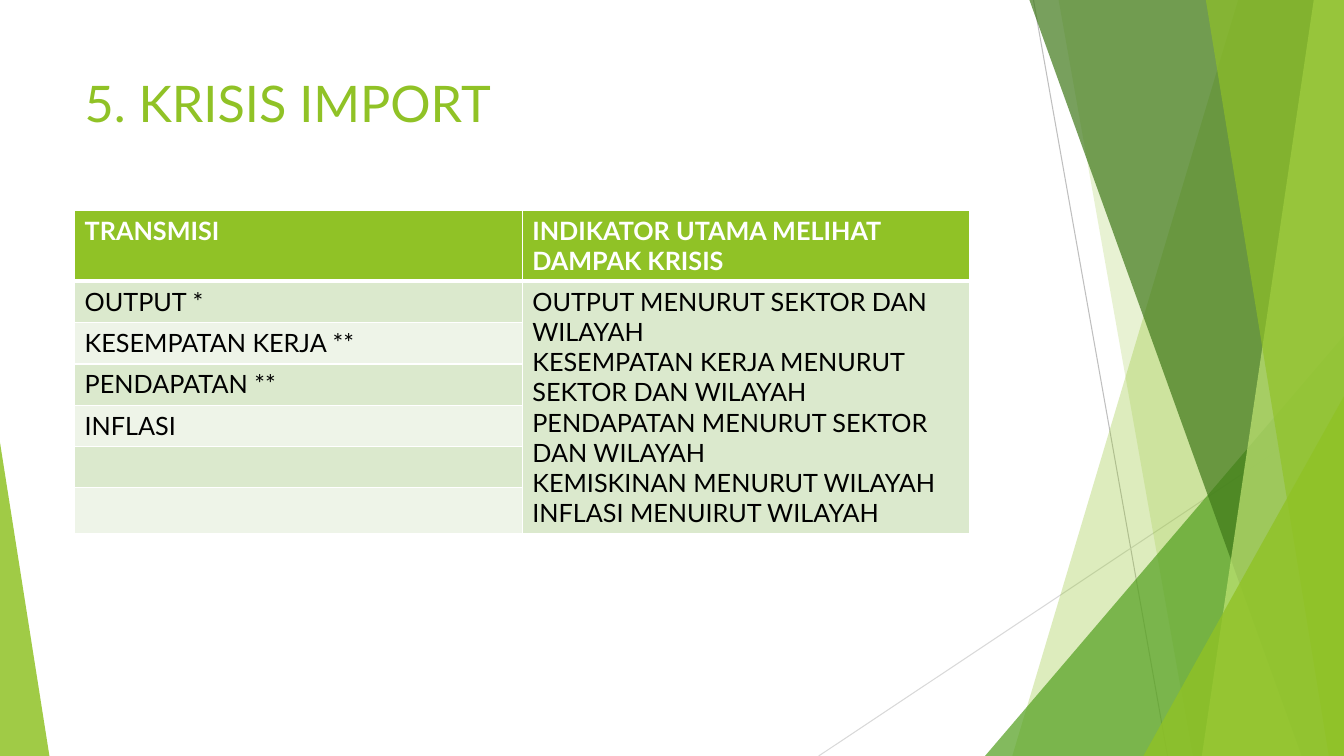
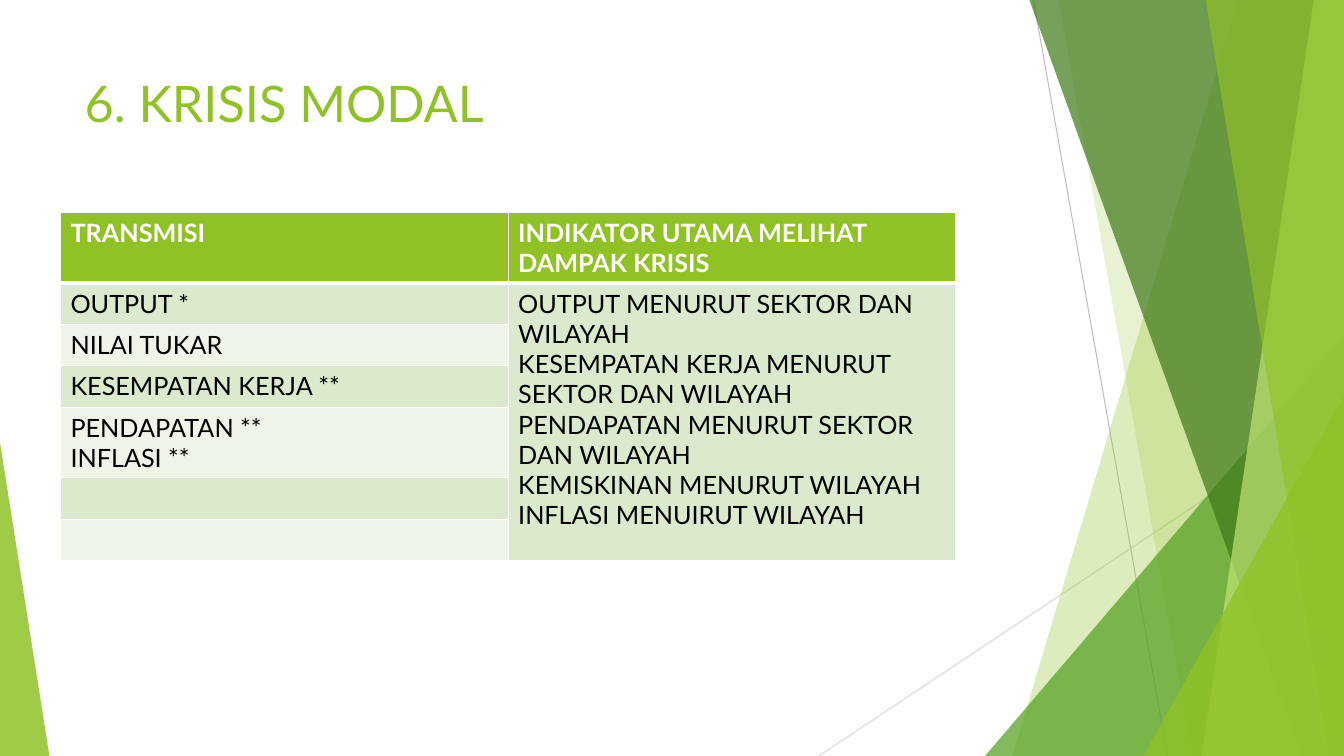
from dataclasses import dataclass

from lxml.etree import SubElement
from pptx import Presentation
from pptx.dml.color import RGBColor
from pptx.enum.shapes import MSO_CONNECTOR as Connector, MSO_SHAPE as Shape
from pptx.enum.text import MSO_ANCHOR as Anchor
from pptx.oxml.ns import qn
from pptx.util import Inches, Pt


@dataclass(frozen=True)
class Theme:
    font: str = "Lato"
    title_size: int = 36
    table_size: int = 18
    lime: str = "90C226"
    green: str = "54A021"
    forest: str = "3F7819"
    pale_lime: str = "C0E474"
    band_dark: str = "DBE9CD"
    band_light: str = "EEF4E8"
    white: str = "FFFFFF"
    black: str = "000000"
    ray_dark: str = "BFBFBF"
    ray_light: str = "D9D9D9"


WIDTH, HEIGHT = 13.33, 7.5
HEADINGS = ["TRANSMISI", "INDIKATOR UTAMA MELIHAT DAMPAK KRISIS"]
INDICATORS = [
    "OUTPUT MENURUT SEKTOR DAN WILAYAH",
    "KESEMPATAN KERJA MENURUT SEKTOR DAN WILAYAH",
    "PENDAPATAN MENURUT SEKTOR DAN WILAYAH",
    "KEMISKINAN MENURUT WILAYAH",
    "INFLASI MENUIRUT WILAYAH",
]
CRISES = [
    ("5. KRISIS IMPORT", (0.74, 2.09),
     ["OUTPUT *", "KESEMPATAN KERJA **", "PENDAPATAN **", "INFLASI", "", ""]),
    ("6. KRISIS MODAL", (0.6, 2.11),
     ["OUTPUT *", "NILAI TUKAR", "KESEMPATAN KERJA **",
      "PENDAPATAN **\nINFLASI **", "", ""]),
]


def set_all(target, formats):
    for attribute, value in formats.items():
        setattr(target, attribute, value)


class Deck:
    def __init__(self, theme):
        self.theme = theme
        self.presentation = Presentation()
        set_all(self.presentation, {"slide_width": Inches(WIDTH),
                                    "slide_height": Inches(HEIGHT)})
        self.slide = None

    def new_slide(self):
        blank = self.presentation.slide_layouts[6]
        self.slide = self.presentation.slides.add_slide(blank)
        self.facets()

    def ray(self, start, end, color):
        ray = self.slide.shapes.add_connector(
            Connector.STRAIGHT, *map(Inches, start + end))
        ray.line.color.rgb = RGBColor.from_string(color)
        ray.line.width = Pt(0.75)
        SubElement(ray._element.spPr, qn("a:effectLst"))

    def glaze(self, facet, color, opacity):
        facet.shadow.inherit = False
        facet.line.fill.background()
        facet.fill.solid()
        facet.fill.fore_color.rgb = RGBColor.from_string(color)
        tint = facet._element.spPr.find(qn("a:solidFill"))[0]
        SubElement(tint, qn("a:alpha"), val=str(opacity * 1000))

    def blade(self, top, bottom, color, opacity):
        corners = [(WIDTH, 0), (WIDTH, HEIGHT), (bottom, HEIGHT)]
        outline = self.slide.shapes.build_freeform(Inches(top), 0)
        outline.add_line_segments([tuple(map(Inches, c)) for c in corners])
        self.glaze(outline.convert_to_shape(), color, opacity)

    def wedge(self, left, top, width, apex, color, opacity):
        wedge = self.slide.shapes.add_shape(
            Shape.ISOSCELES_TRIANGLE,
            *map(Inches, (left, top, width, HEIGHT - top)))
        wedge.adjustments[0] = apex
        self.glaze(wedge, color, opacity)

    def facets(self):
        t = self.theme
        self.ray((10.25, 0), (11.58, HEIGHT), t.ray_dark)
        self.ray((WIDTH, 4.03), (8.12, HEIGHT), t.ray_light)
        self.blade(12.28, 10.04, t.lime, 30)
        self.blade(10.5, 11.83, t.lime, 20)
        self.wedge(9.77, 3.33, 3.56, 1, t.green, 72)
        self.blade(10.21, 12.91, t.forest, 70)
        self.blade(13.03, 11.92, t.pale_lime, 70)
        self.blade(11.96, 13.18, t.lime, 65)
        self.wedge(11.34, 3.93, 1.99, 1, t.lime, 80)
        self.wedge(0, 4.39, 0.49, 0, t.lime, 85)

    def put_text(self, frame, text, size, color, bold=False):
        frame.text = text
        for paragraph in frame.paragraphs:
            set_all(paragraph.font, {"name": self.theme.font,
                                     "size": Pt(size), "bold": bold})
            paragraph.font.color.rgb = RGBColor.from_string(color)

    def title(self, text):
        box = self.slide.shapes.add_textbox(
            *map(Inches, (0.74, 0.67, 9.4, 1.44)))
        set_all(box.text_frame, {"word_wrap": True,
                                 "vertical_anchor": Anchor.TOP})
        self.put_text(box.text_frame, text, self.theme.title_size,
                      self.theme.lime)

    def borders(self, cell, top, bottom):
        properties = cell._tc.get_or_add_tcPr()
        for side, points in zip("LRTB", (1, 1, top, bottom)):
            edge = SubElement(properties, qn(f"a:ln{side}"), w=str(Pt(points)))
            SubElement(SubElement(edge, qn("a:solidFill")),
                       qn("a:srgbClr"), val=self.theme.white)

    def cell(self, cell, row, text):
        t = self.theme
        heading = row == 0
        fill = t.lime if heading else (t.band_light, t.band_dark)[row % 2]
        self.borders(cell, 3 if row == 1 else 1, 3 if heading else 1)
        cell.fill.solid()
        cell.fill.fore_color.rgb = RGBColor.from_string(fill)
        self.put_text(cell.text_frame, text, t.table_size,
                      t.white if heading else t.black, heading)

    def transmission_table(self, corner, channels):
        rows = [HEADINGS] + [[channel, ""] for channel in channels]
        rows[1][1] = "\n".join(INDICATORS)
        heights = [0.33] + [0.41] * len(channels)
        table = self.slide.shapes.add_table(
            len(rows), 2, *map(Inches, corner + (8.88, sum(heights)))).table
        for column in table.columns:
            column.width = Inches(4.44)
        for r, (texts, height) in enumerate(zip(rows, heights)):
            table.rows[r].height = Inches(height)
            for c, text in enumerate(texts):
                self.cell(table.cell(r, c), r, text)
        table.cell(1, 1).merge(table.cell(len(channels), 1))


def main():
    deck = Deck(Theme())
    for heading, corner, channels in CRISES:
        deck.new_slide()
        deck.title(heading)
        deck.transmission_table(corner, channels)
    deck.presentation.save("out.pptx")


if __name__ == "__main__":
    main()
